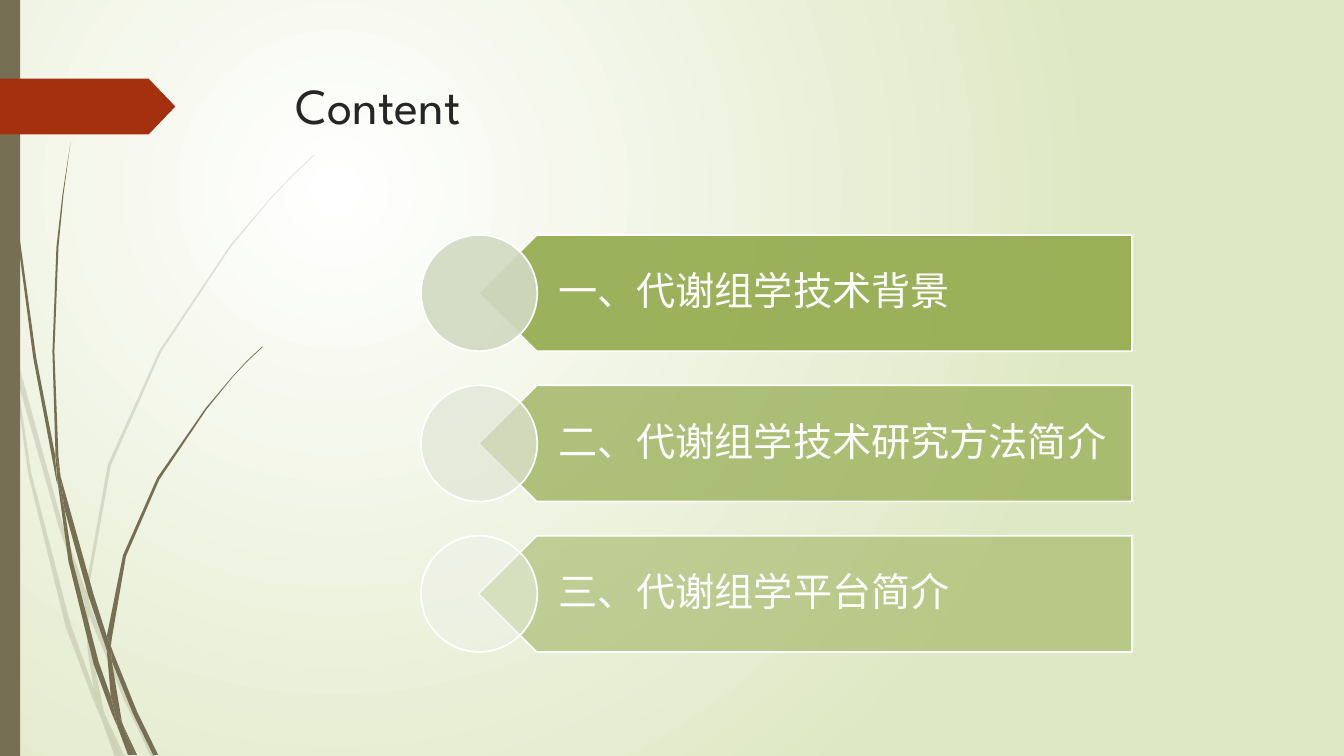
from dataclasses import dataclass

import lxml.etree
import pptx
import pptx.dml.color
import pptx.enum.shapes
import pptx.enum.text
import pptx.oxml.ns
import pptx.util

Cm = pptx.util.Cm
Pt = pptx.util.Pt
Shapes = pptx.enum.shapes.MSO_SHAPE


@dataclass(frozen=True)
class Theme:
    font: str = "League Spartan"
    title_size: int = 36
    item_size: int = 28
    outline: float = 1.25
    ink: str = "262626"
    white: str = "FFFFFF"
    backdrop: str = "DFE8C4"
    stem: str = "766F54"
    tag: str = "A53010"
    bar: str = "92AA4C"


@dataclass(frozen=True)
class Item:
    text: str
    circle: str
    opacity: int


@dataclass(frozen=True)
class Tuft:
    """Grass pieces that fit edge to edge; corners are in grass units."""
    opacity: int
    pieces: tuple


THEME = Theme()
GRASS_UNIT = Cm(2.54)

ITEMS = (
    Item("一、代谢组学技术背景", "D2DAC2", 90),
    Item("二、代谢组学技术研究方法简介", "E0E5D6", 70),
    Item("三、代谢组学平台简介", "EEF1E9", 50),
)

FAINT_TUFT = Tuft(20, (
    ((0.11, 3.5), (0.09, 3.22), (0, 2.82), (0, 2.99), (0.1, 3.44)),
    ((0.58, 5.22), (0.84, 5.99), (0.85, 5.86), (0.62, 5.2), (0.14, 3.45), (0.17, 3.76)),
    ((0.92, 6.07), (0.88, 5.96), (0.88, 6.1), (1.23, 6.94), (1.5, 7.51), (1.55, 7.51),
     (1.27, 6.92)),
    ((1.19, 7.51), (1.24, 7.51), (1.05, 7.11)),
    ((0.93, 6.83), (0.7, 6.19), (0.31, 4.69), (0.17, 3.76), (0.11, 3.5), (0.28, 4.7),
     (0.65, 6.21), (0.92, 6.93), (1.01, 7.14), (0.99, 7.07)),
    ((0.84, 5.99), (0.87, 6.46), (0.93, 6.83), (0.96, 6.92), (1.05, 7.11), (1.03, 7.06),
     (0.91, 6.46), (0.88, 6.1), (0.88, 6.08)),
    ((0.88, 5.84), (1.1, 4.62), (1.6, 3.49), (2.29, 2.45), (2.68, 1.98), (2.9, 1.75),
     (3.12, 1.54), (3.12, 1.53), (2.89, 1.75), (2.68, 1.97), (2.28, 2.44), (1.58, 3.48),
     (1.07, 4.61), (0.85, 5.84), (0.85, 5.86), (0.88, 5.96)),
    ((1.01, 7.14), (1.14, 7.51), (1.19, 7.51)),
    ((0.88, 6.08), (0.88, 6.1), (0.88, 5.96), (0.85, 5.86), (0.84, 5.99)),
    ((0.96, 6.92), (0.93, 6.83), (0.99, 7.07), (1.01, 7.14), (1.19, 7.51), (1.05, 7.11)),
))

SOLID_TUFT = Tuft(100, (
    ((0.07, 1.1), (0.17, 2.33), (0.33, 3.55), (0.56, 4.77), (0.57, 4.81), (0.55, 4.57),
     (0.55, 4.53), (0.36, 3.55), (0.19, 2.32), (0.08, 1.09), (0.05, 0.48), (0.04, 0),
     (0.03, 0), (0.04, 0.48)),
    ((0.88, 5.92), (1.06, 6.45), (1.06, 6.31), (0.93, 5.9), (0.6, 4.72), (0.64, 5.05)),
    ((1.13, 6.49), (1.1, 6.41), (1.11, 6.56), (1.32, 7.08), (1.52, 7.49), (1.57, 7.49),
     (1.36, 7.06)),
    ((1.1, 6.91), (0.98, 6.57), (0.72, 5.56), (0.64, 5.05), (0.57, 4.77), (0.68, 5.57),
     (0.93, 6.59), (1.11, 7.08), (1.17, 7.22), (1.16, 7.17)),
    ((0.6, 4.72), (0.58, 4.53), (0.54, 3.49), (0.58, 2.45), (0.63, 1.93), (0.7, 1.41),
     (0.62, 1.93), (0.56, 2.45), (0.52, 3.49), (0.55, 4.49)),
    ((1.33, 7.49), (1.36, 7.49), (1.22, 7.19)),
    ((0.57, 4.77), (0.64, 5.05), (0.6, 4.72), (0.55, 4.49), (0.55, 4.53)),
    ((1.11, 6.33), (1.25, 5.52), (1.58, 4.76), (2.05, 4.06), (2.31, 3.74), (2.45, 3.59),
     (2.61, 3.44), (2.6, 3.44), (2.45, 3.58), (2.31, 3.73), (2.04, 4.05), (1.56, 4.74),
     (1.22, 5.51), (1.06, 6.31), (1.1, 6.41)),
    ((1.17, 7.22), (1.27, 7.49), (1.31, 7.49)),
    ((1.06, 6.45), (1.1, 6.91), (1.16, 7.06), (1.22, 7.19), (1.21, 7.16), (1.11, 6.56),
     (1.09, 6.51)),
    ((1.06, 6.45), (1.09, 6.51), (1.11, 6.56), (1.1, 6.41), (1.06, 6.31)),
    ((1.16, 7.06), (1.1, 6.91), (1.16, 7.17), (1.17, 7.22), (1.3, 7.49), (1.33, 7.49),
     (1.22, 7.19)),
))


def rgb(colour: str) -> pptx.dml.color.RGBColor:
    return pptx.dml.color.RGBColor.from_string(colour)


def paint(shape, colour: str, opacity: int = 100, outlined: bool = False) -> None:
    shape.shadow.inherit = False
    shape.fill.solid()
    shape.fill.fore_color.rgb = rgb(colour)
    if opacity < 100:
        colour_node = shape.element.spPr.find(".//" + pptx.oxml.ns.qn("a:srgbClr"))
        lxml.etree.SubElement(colour_node, pptx.oxml.ns.qn("a:alpha"), val=str(opacity * 1000))
    if outlined:
        shape.line.color.rgb = rgb(THEME.white)
        shape.line.width = Pt(THEME.outline)
    else:
        shape.line.fill.background()


def add_preset(page, kind, left: float, top: float, width: float, height: float):
    return page.shapes.add_shape(kind, Cm(left), Cm(top), Cm(width), Cm(height))


def add_text(page, text: str, left: float, top: float, width: float, height: float,
             size: int, colour: str):
    box = page.shapes.add_textbox(Cm(left), Cm(top), Cm(width), Cm(height))
    box.text_frame.word_wrap = True
    box.text_frame.text = text
    span = box.text_frame.paragraphs[0].runs[0]
    span.font.name = THEME.font
    span.font.size = Pt(size)
    span.font.color.rgb = rgb(colour)
    return box


def add_tuft(page, tuft: Tuft) -> None:
    for piece in tuft.pieces:
        corners = [(x * GRASS_UNIT, y * GRASS_UNIT) for x, y in piece]
        builder = page.shapes.build_freeform(*corners[0])
        builder.add_line_segments(corners[1:], close=True)
        paint(builder.convert_to_shape(), THEME.stem, tuft.opacity)


def add_item(page, item: Item, top: float) -> None:
    height = 2.93
    bar = add_preset(page, Shapes.PENTAGON, 12.06, top, 16.47, height)
    bar.rotation = 180
    paint(bar, THEME.bar, item.opacity, outlined=True)

    box = add_text(page, item.text, 12.78, top, 15.75, height, THEME.item_size, THEME.white)
    frame = box.text_frame
    frame.vertical_anchor = pptx.enum.text.MSO_ANCHOR.MIDDLE
    frame.margin_left, frame.margin_right = Cm(1.29), Cm(0.56)
    frame.margin_top = frame.margin_bottom = Cm(0.3)
    frame.paragraphs[0].line_spacing = 0.9

    circle = add_preset(page, Shapes.OVAL, 10.61, top, height, height)
    paint(circle, item.circle, item.opacity, outlined=True)


def set_background(page) -> None:
    fill = page.background.fill
    fill.gradient()
    for stop, position, colour in zip(fill.gradient_stops, (0, 1), (THEME.white, THEME.backdrop)):
        stop.position = position
        stop.color.rgb = rgb(colour)
    # Turn the linear gradient into a circular one
    gradient = page.element.find(".//" + pptx.oxml.ns.qn("a:gradFill"))
    for linear in gradient.findall(pptx.oxml.ns.qn("a:lin")):
        gradient.remove(linear)
    circular = lxml.etree.SubElement(gradient, pptx.oxml.ns.qn("a:path"), path="circle")
    lxml.etree.SubElement(circular, pptx.oxml.ns.qn("a:fillToRect"),
                          l="50000", t="50000", r="100000", b="100000")


def main() -> None:
    deck = pptx.Presentation()
    deck.slide_width, deck.slide_height = Cm(33.87), Cm(19.05)
    page = deck.slides.add_slide(deck.slide_layouts[6])
    set_background(page)

    # Grass, side band and red tag
    for tuft in (FAINT_TUFT, SOLID_TUFT):
        add_tuft(page, tuft)
    paint(add_preset(page, Shapes.RECTANGLE, 0, 0, 0.51, 19.05), THEME.stem)
    tag = add_preset(page, Shapes.PENTAGON, 0, 1.98, 4.42, 1.41)
    tag.adjustments[0] = 0.48
    paint(tag, THEME.tag)

    # Title and list of contents
    add_text(page, "Content", 7.21, 1.74, 24.77, 3.56, THEME.title_size, THEME.ink)
    for index, item in enumerate(ITEMS):
        add_item(page, item, 5.92 + 3.79 * index)

    deck.save("out.pptx")


if __name__ == "__main__":
    main()
